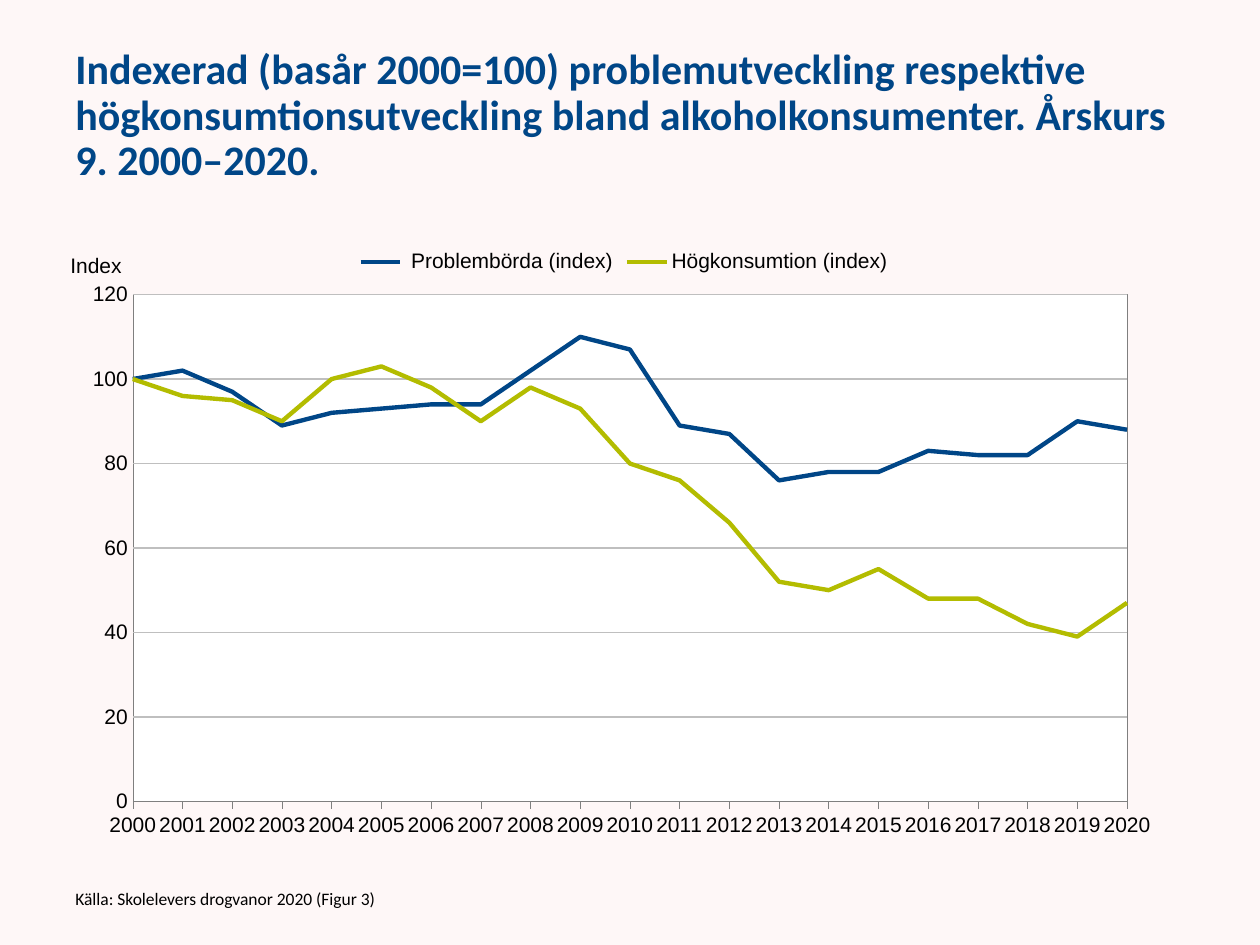
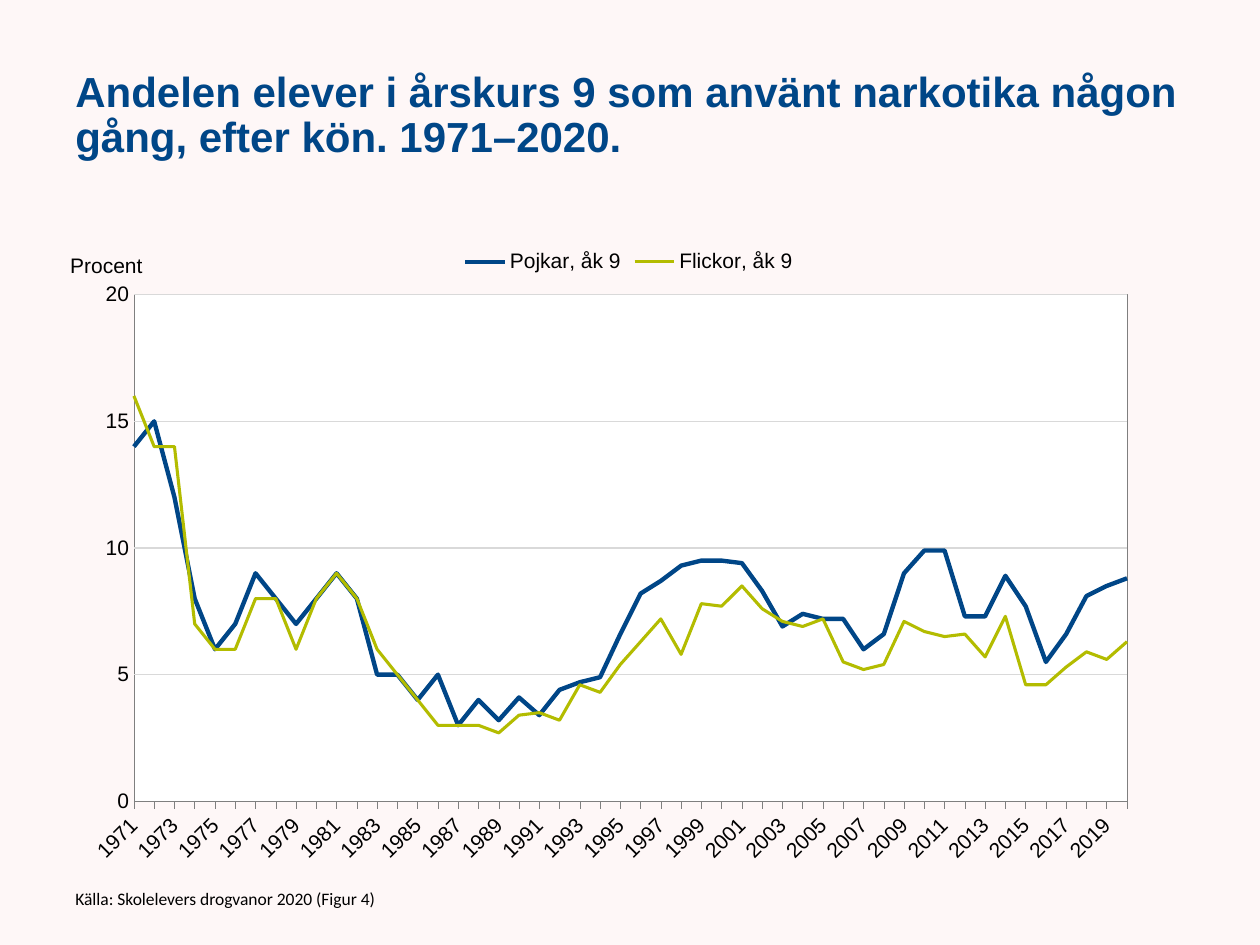
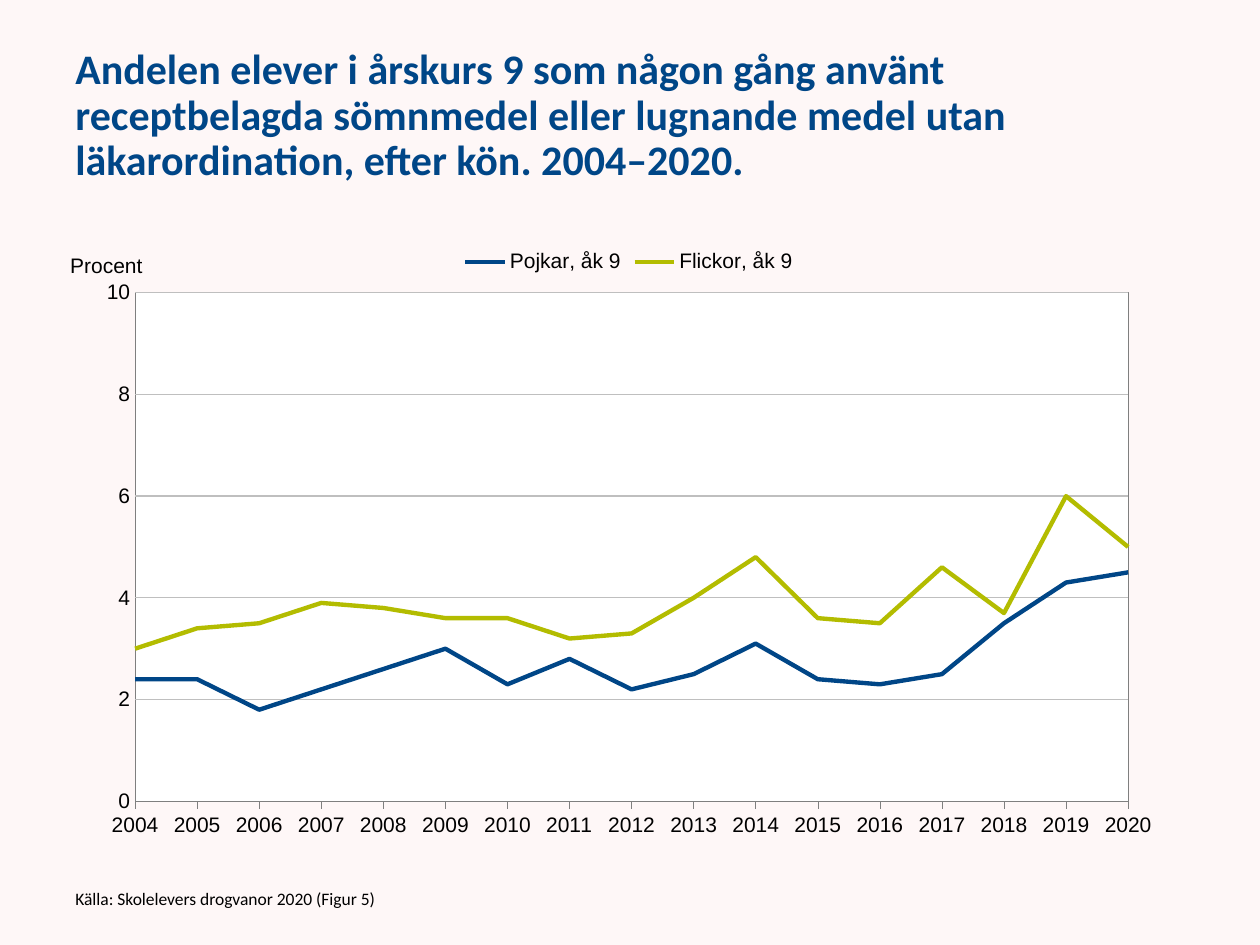
from dataclasses import dataclass

from lxml import etree
from pptx import Presentation
from pptx import util as u
from pptx.chart.data import CategoryChartData
from pptx.dml.color import RGBColor
from pptx.enum import chart as charts
from pptx.enum import text
from pptx.oxml.ns import nsdecls, qn
from pptx.oxml import parse_xml

WIDTH, HEIGHT = u.Inches(10), u.Inches(7.5)
BACKGROUND, BLUE, GREEN = "FEF7F7", "004687", "B3BC00"
BLACK, WHITE, AXIS_GREY = "000000", "FFFFFF", "7F7F7F"


@dataclass(frozen=True)
class Area:
    left: float
    top: float
    width: float
    height: float

    def lengths(self) -> tuple[int, int, int, int]:
        return (int(self.left * WIDTH), int(self.top * HEIGHT),
                int(self.width * WIDTH), int(self.height * HEIGHT))


@dataclass(frozen=True)
class Trend:
    name: str
    values: tuple[float, ...]
    colour: str
    weight: float = 2.5


@dataclass(frozen=True)
class Figure:
    number: int
    heading: str
    heading_font: str
    unit: str
    first_year: int
    maximum: int
    step: int
    grid_colour: str
    plot: tuple[float, float, float, float]
    legend_left: float
    trends: tuple[Trend, ...]
    year_step: int = 1
    year_angle: int = 0


HEADING_AREA = Area(0.05, 0.04, 0.9, 0.1667)
CHART_AREA = Area(0.05, 0.2253, 0.923, 0.692)
SOURCE_AREA = Area(0.05, 0.9253, 0.45, 0.0533)

FIGURES = (
    Figure(
        3,
        "Indexerad (basår 2000=100) problemutveckling respektive "
        "högkonsumtionsutveckling bland alkoholkonsumenter. Årskurs 9. 2000–2020.",
        "Calibri", "Index", 2000, 120, 20, "BFBFBF",
        (0.06, 0.125, 0.855, 0.775), 0.25,
        (
            Trend(" Problembörda (index)",
                  (100, 102, 97, 89, 92, 93, 94, 94, 102, 110, 107, 89, 87, 76, 78,
                   78, 83, 82, 82, 90, 88), BLUE),
            Trend("Högkonsumtion (index)",
                  (100, 96, 95, 90, 100, 103, 98, 90, 98, 93, 80, 76, 66, 52, 50,
                   55, 48, 48, 42, 39, 47), GREEN),
        ),
    ),
    Figure(
        4,
        "Andelen elever i årskurs 9 som använt narkotika någon gång, "
        "efter kön. 1971–2020.",
        "Arial", "Procent", 1971, 20, 5, "D9D9D9",
        (0.061, 0.125, 0.854, 0.775), 0.34,
        (
            Trend("Pojkar, åk 9",
                  (14, 15, 12, 8, 6, 7, 9, 8, 7, 8, 9, 8, 5, 5, 4, 5, 3, 4, 3.2, 4.1,
                   3.4, 4.4, 4.7, 4.9, 6.6, 8.2, 8.7, 9.3, 9.5, 9.5, 9.4, 8.3, 6.9,
                   7.4, 7.2, 7.2, 6, 6.6, 9, 9.9, 9.9, 7.3, 7.3, 8.9, 7.7, 5.5, 6.6,
                   8.1, 8.5, 8.8), BLUE),
            Trend("Flickor, åk 9",
                  (16, 14, 14, 7, 6, 6, 8, 8, 6, 8, 9, 8, 6, 5, 4, 3, 3, 3, 2.7, 3.4,
                   3.5, 3.2, 4.6, 4.3, 5.4, 6.3, 7.2, 5.8, 7.8, 7.7, 8.5, 7.6, 7.1,
                   6.9, 7.2, 5.5, 5.2, 5.4, 7.1, 6.7, 6.5, 6.6, 5.7, 7.3, 4.6, 4.6,
                   5.3, 5.9, 5.6, 6.3), GREEN, 1.75),
        ),
        year_step=2,
        year_angle=-45,
    ),
    Figure(
        5,
        "Andelen elever i årskurs 9 som någon gång använt receptbelagda sömnmedel "
        "eller lugnande medel utan läkarordination, efter kön. 2004–2020.",
        "Calibri", "Procent", 2004, 10, 2, "BFBFBF",
        (0.062, 0.122, 0.854, 0.778), 0.34,
        (
            Trend("Pojkar, åk 9",
                  (2.4, 2.4, 1.8, 2.2, 2.6, 3, 2.3, 2.8, 2.2, 2.5, 3.1, 2.4, 2.3,
                   2.5, 3.5, 4.3, 4.5), BLUE),
            Trend("Flickor, åk 9",
                  (3, 3.4, 3.5, 3.9, 3.8, 3.6, 3.6, 3.2, 3.3, 4, 4.8, 3.6, 3.5, 4.6,
                   3.7, 6, 5), GREEN),
        ),
    ),
)


def rgb(colour: str) -> RGBColor:
    return RGBColor.from_string(colour)


def style_font(font, family: str, size: float, colour: str, bold: bool = False) -> None:
    font.name, font.size, font.bold = family, u.Pt(size), bold
    font.color.rgb = rgb(colour)


def style_line(line, colour: str, weight: float) -> None:
    line.color.rgb = rgb(colour)
    line.width = u.Pt(weight)


def add_text(slide, area: Area, content: str, family: str, size: float,
             colour: str, bold: bool = False) -> None:
    frame = slide.shapes.add_textbox(*area.lengths()).text_frame
    frame.word_wrap = True
    frame.vertical_anchor = text.MSO_ANCHOR.MIDDLE
    paragraph = frame.paragraphs[0]
    paragraph.line_spacing = 0.9
    run = paragraph.add_run()
    run.text = content
    style_font(run.font, family, size, colour, bold)


def chart_tag(name: str, value: str):
    element = etree.Element(qn(f"c:{name}"))
    element.set("val", value)
    return element


def place(part, index: int, **shares: float) -> None:
    for automatic in part.findall(qn("c:layout")):
        part.remove(automatic)
    layout = etree.Element(qn("c:layout"))
    manual = etree.SubElement(layout, qn("c:manualLayout"))
    if "w" in shares:
        manual.append(chart_tag("layoutTarget", "inner"))
    for mode in ("xMode", "yMode"):
        manual.append(chart_tag(mode, "edge"))
    for side, share in shares.items():
        manual.append(chart_tag(side, str(share)))
    part.insert(index, layout)


def frame_chart(chart) -> None:
    space = chart._chartSpace
    plot_area = space.find(f".//{qn('c:plotArea')}")
    plot_area.append(parse_xml(
        f'<c:spPr {nsdecls("c", "a")}><a:solidFill><a:srgbClr val="{WHITE}"/></a:solidFill>'
        f'<a:ln w="3175"><a:solidFill><a:srgbClr val="{AXIS_GREY}"/></a:solidFill></a:ln>'
        '</c:spPr>'))
    space.find(qn("c:chart")).addnext(parse_xml(
        f'<c:spPr {nsdecls("c", "a")}><a:noFill/><a:ln><a:noFill/></a:ln></c:spPr>'))


def style_years(axis, figure: Figure) -> None:
    axis.major_tick_mark = charts.XL_TICK_MARK.OUTSIDE
    style_font(axis.tick_labels.font, "Arial", 12, BLACK)
    style_line(axis.format.line, AXIS_GREY, 0.25)
    body = axis._element.find(f"{qn('c:txPr')}/{qn('a:bodyPr')}")
    body.set("rot", str(figure.year_angle * 60000))
    body.set("vert", "horz")
    offset = axis._element.find(qn("c:lblOffset"))
    offset.addnext(chart_tag("tickMarkSkip", "1"))
    offset.addnext(chart_tag("tickLblSkip", str(figure.year_step)))


def style_scale(axis, figure: Figure) -> None:
    axis.minimum_scale, axis.maximum_scale = 0, figure.maximum
    axis.major_unit = figure.step
    axis.major_tick_mark = charts.XL_TICK_MARK.NONE
    axis.format.line.fill.background()
    style_font(axis.tick_labels.font, "Arial", 12, BLACK)
    axis.tick_labels.number_format = "General"
    axis.tick_labels.number_format_is_linked = False
    axis.has_major_gridlines = True
    style_line(axis.major_gridlines.format.line, figure.grid_colour, 0.75)
    for between in axis._element.findall(qn("c:crossBetween")):
        axis._element.remove(between)
    axis._element.find(qn("c:crosses")).addnext(chart_tag("crossBetween", "midCat"))

    unit = axis.axis_title
    run = unit.text_frame.paragraphs[0].add_run()
    run.text = figure.unit
    style_font(run.font, "Arial", 12, BLACK)
    body = unit._element.find(f".//{qn('a:bodyPr')}")
    body.set("rot", "0")
    body.set("vert", "horz")
    place(unit._element, 1, x=0.003, y=0.055)


def add_trend_chart(slide, figure: Figure) -> None:
    data = CategoryChartData()
    last_year = figure.first_year + len(figure.trends[0].values)
    data.categories = [str(year) for year in range(figure.first_year, last_year)]
    for trend in figure.trends:
        data.add_series(trend.name, trend.values)
    chart = slide.shapes.add_chart(
        charts.XL_CHART_TYPE.LINE, *CHART_AREA.lengths(), data).chart
    chart.has_title = False
    style_font(chart.font, "Arial", 12, BLACK)
    frame_chart(chart)

    chart.plots[0].vary_by_categories = False
    for series, trend in zip(chart.plots[0].series, figure.trends):
        series.smooth = False
        series.marker.style = charts.XL_MARKER_STYLE.NONE
        style_line(series.format.line, trend.colour, trend.weight)

    style_years(chart.category_axis, figure)
    style_scale(chart.value_axis, figure)

    chart.has_legend = True
    chart.legend.position = charts.XL_LEGEND_POSITION.TOP
    chart.legend.include_in_layout = False
    style_font(chart.legend.font, "Arial", 12, BLACK)
    place(chart.legend._element, 1, x=figure.legend_left, y=0.05)
    plot_area = chart._chartSpace.find(f".//{qn('c:plotArea')}")
    place(plot_area, 0, **dict(zip("xywh", figure.plot)))


def add_figure_slide(deck, figure: Figure) -> None:
    slide = deck.slides.add_slide(deck.slide_layouts[6])
    add_text(slide, HEADING_AREA, figure.heading, figure.heading_font, 24, BLUE, True)
    add_trend_chart(slide, figure)
    source = f"Källa: Skolelevers drogvanor 2020 (Figur {figure.number})"
    add_text(slide, SOURCE_AREA, source, "Calibri", 10, BLACK)


def main() -> None:
    deck = Presentation()
    deck.slide_width, deck.slide_height = WIDTH, HEIGHT
    backdrop = deck.slide_master.background.fill
    backdrop.solid()
    backdrop.fore_color.rgb = rgb(BACKGROUND)
    for figure in FIGURES:
        add_figure_slide(deck, figure)
    deck.save("out.pptx")


if __name__ == "__main__":
    main()
